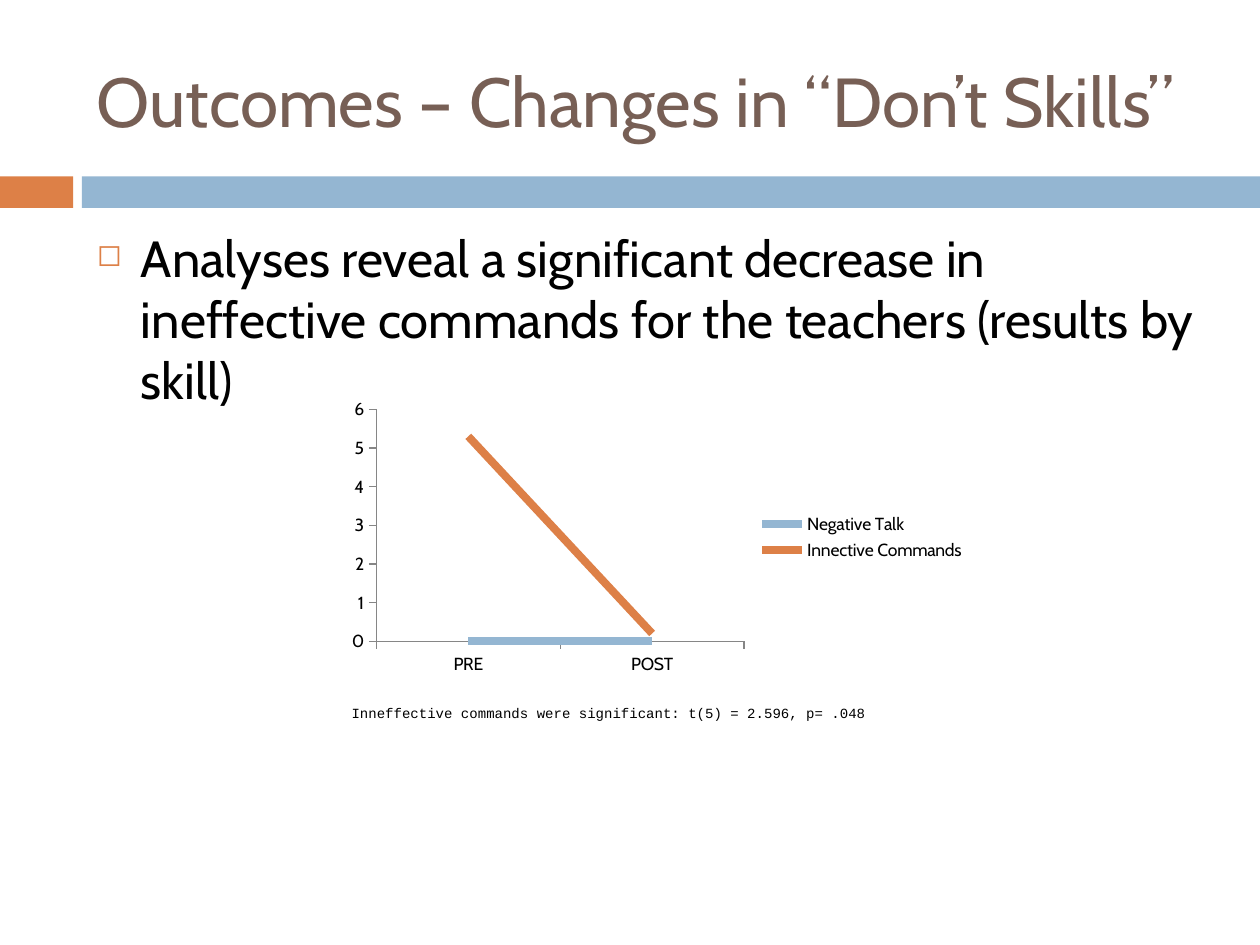
from dataclasses import dataclass

from lxml import etree
from pptx import Presentation
from pptx import util as u
from pptx.chart.data import CategoryChartData
from pptx.dml.color import RGBColor
from pptx.enum import chart as ch, shapes, text
from pptx.oxml import ns


@dataclass(frozen=True)
class Theme:
    blue: str = "94B6D2"
    orange: str = "DD8047"
    brown: str = "775F55"
    black: str = "000000"
    axis: str = "868686"
    sans: str = "Cabin"
    mono: str = "Courier New"
    title: float = 39.6
    body: float = 29
    label: float = 10
    note: float = 8
    stroke: float = 4.5


T = Theme()


def rgb(tint):
    return RGBColor.from_string(tint)


def style(font, face, size, tint):
    font.name, font.size = face, u.Pt(size)
    font.color.rgb = rgb(tint)


def inches(box):
    return [u.Inches(n) for n in box]


def add_text(slide, box, words, size, tint, anchor):
    frame = slide.shapes.add_textbox(*inches(box)).text_frame
    frame.word_wrap = True
    frame.vertical_anchor = anchor
    para = frame.paragraphs[0]
    para.text = words
    style(para.font, T.sans, size, tint)
    return para


def add_band(slide, box, split=0.58, gap=0.07):
    """Short accent block, a gap, then the long bar."""
    left, top, width, height = box
    start = split + gap
    parts = [(left, split, T.orange), (left + start, width - start, T.blue)]
    for x, wide, tint in parts:
        bar = slide.shapes.add_shape(
            shapes.MSO_SHAPE.RECTANGLE, *inches((x, top, wide, height)))
        bar.shadow.inherit = False
        bar.fill.solid()
        bar.fill.fore_color.rgb = rgb(tint)
        bar.line.fill.background()


def add_bullet(slide, box, words):
    para = add_text(slide, box, words, T.body, T.black, text.MSO_ANCHOR.TOP)
    para.space_before = u.Pt(7)
    props = para._p.get_or_add_pPr()
    indent = u.Inches(0.35)
    props.set("marL", str(indent))
    props.set("indent", str(-indent))
    tint = etree.SubElement(props, ns.qn("a:buClr"))
    etree.SubElement(tint, ns.qn("a:srgbClr"), val=T.orange)
    etree.SubElement(props, ns.qn("a:buSzPct"), val="60000")
    etree.SubElement(props, ns.qn("a:buChar"), char="◻")


def add_lines(slide, box):
    data = CategoryChartData()
    data.categories = ["PRE", "POST"]
    data.add_series("Negative Talk", (0, 0))
    data.add_series("Innective Commands", (5.3, 0.2))
    chart = slide.shapes.add_chart(
        ch.XL_CHART_TYPE.LINE, *inches(box), data).chart
    style(chart.font, T.sans, T.label, T.black)
    chart.has_title = False
    chart.has_legend = True
    chart.legend.position = ch.XL_LEGEND_POSITION.RIGHT
    chart.legend.include_in_layout = False

    for axis in (chart.category_axis, chart.value_axis):
        axis.has_major_gridlines = False
        axis.major_tick_mark = ch.XL_TICK_MARK.OUTSIDE
        axis.format.line.color.rgb = rgb(T.axis)
        axis.format.line.width = u.Pt(0.75)
    scale = chart.value_axis
    scale.minimum_scale, scale.maximum_scale, scale.major_unit = 0, 6, 1

    for line, tint in zip(chart.plots[0].series, (T.blue, T.orange)):
        line.smooth = False
        line.marker.style = ch.XL_MARKER_STYLE.NONE
        line.format.line.color.rgb = rgb(tint)
        line.format.line.width = u.Pt(T.stroke)


def add_note(slide, box, words):
    table = slide.shapes.add_table(1, 1, *inches(box)).table
    table.first_row = table.horz_banding = False
    cell = table.cell(0, 0)
    cell.fill.background()
    cell.margin_left = cell.margin_right = 0
    cell.margin_top = cell.margin_bottom = 0
    cell.vertical_anchor = text.MSO_ANCHOR.BOTTOM
    para = cell.text_frame.paragraphs[0]
    para.text = words
    style(para.font, T.mono, T.note, T.black)
    # Clear the borders of the default table style
    props = cell._tc.get_or_add_tcPr()
    for spot, side in enumerate(("lnL", "lnR", "lnT", "lnB")):
        edge = etree.Element(ns.qn("a:" + side))
        etree.SubElement(edge, ns.qn("a:noFill"))
        props.insert(spot, edge)


def main():
    deck = Presentation()
    deck.slide_width, deck.slide_height = u.Inches(10), u.Inches(7.5)
    slide = deck.slides.add_slide(deck.slide_layouts[6])

    # Heading
    add_band(slide, (0, 1.4, 10, 0.25))
    add_text(slide, (0.67, 0.25, 8.92, 1.08),
             "Outcomes – Changes in “Don’t Skills”",
             T.title, T.brown, text.MSO_ANCHOR.MIDDLE)

    # Finding, chart and test result
    add_bullet(slide, (0.67, 1.75, 8.92, 4.92),
               "Analyses reveal a significant decrease in ineffective "
               "commands for the teachers (results by skill)")
    add_lines(slide, (2.69, 3.12, 5.07, 2.28))
    add_note(slide, (2.79, 5.6, 4.42, 0.12),
             "Inneffective commands were significant: "
             "t(5) = 2.596, p= .048")

    deck.save("out.pptx")


if __name__ == "__main__":
    main()
